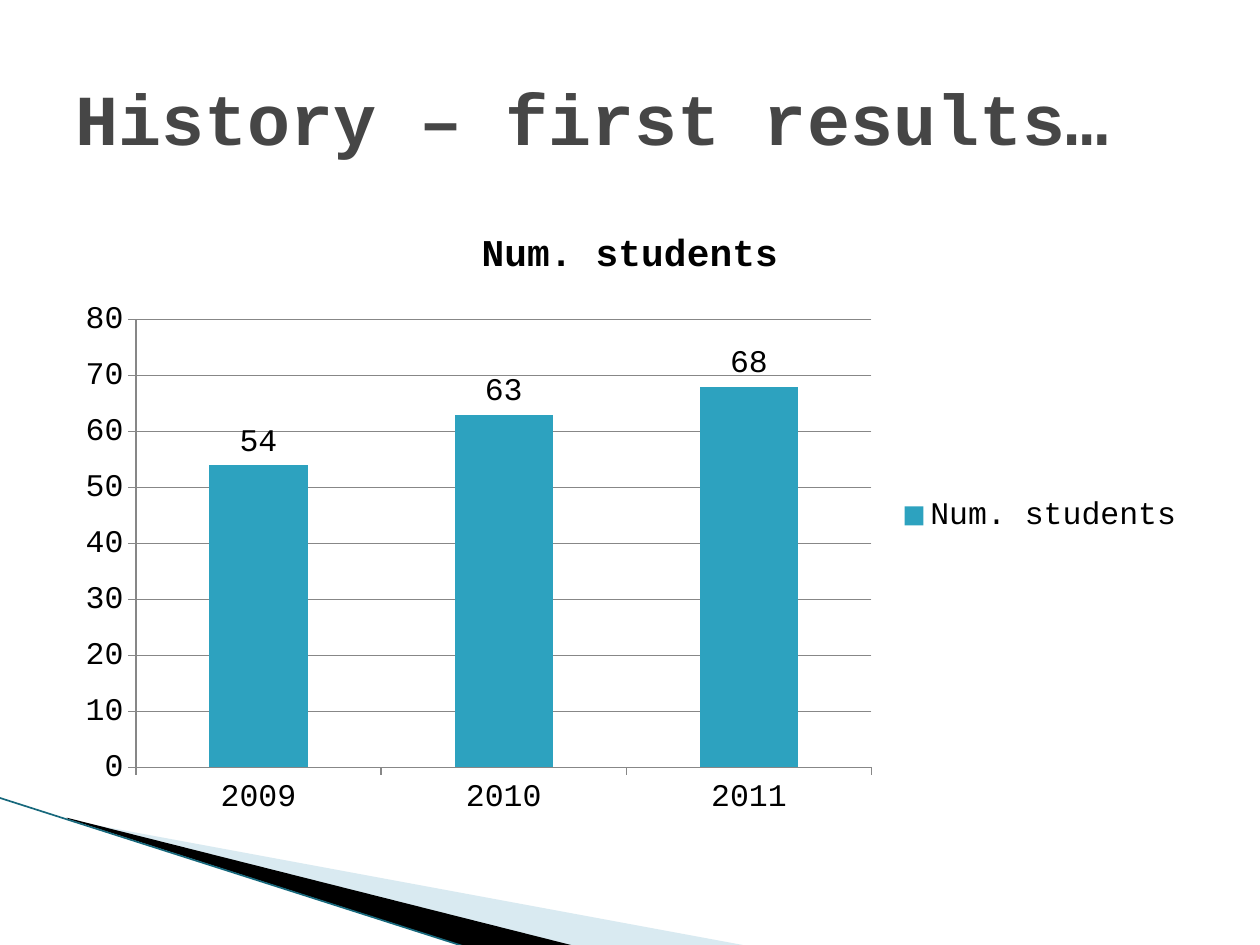
from dataclasses import dataclass

from lxml import etree
from pptx import Presentation
from pptx.chart.data import CategoryChartData
from pptx.dml.color import RGBColor
from pptx.enum.chart import (XL_CHART_TYPE, XL_LABEL_POSITION,
                             XL_LEGEND_POSITION, XL_TICK_MARK)
from pptx.enum.shapes import MSO_CONNECTOR
from pptx.enum.text import MSO_ANCHOR
from pptx.oxml.ns import qn
from pptx.util import Inches, Pt

COLUMN = XL_CHART_TYPE.COLUMN_CLUSTERED
ABOVE = XL_LABEL_POSITION.OUTSIDE_END
RIGHT = XL_LEGEND_POSITION.RIGHT
OUTSIDE = XL_TICK_MARK.OUTSIDE
STRAIGHT = MSO_CONNECTOR.STRAIGHT
MIDDLE = MSO_ANCHOR.MIDDLE


@dataclass(frozen=True)
class Theme:
    font: str = "Courier New"
    head: str = "464646"
    ink: str = "000000"
    bar: str = "2DA2BF"
    grid: str = "878787"
    pale: str = "A0CBDC"
    edge: str = "17687C"
    head_size: float = 41
    name_size: float = 21.6
    body_size: float = 18


def rgb(code):
    return RGBColor.from_string(code)


class Board:
    def __init__(self, slide, theme):
        self.slide = slide
        self.theme = theme

    def style(self, font, size, color, bold=False):
        font.name = self.theme.font
        font.size = Pt(size)
        font.bold = bold
        font.color.rgb = rgb(color)

    def wedge(self, points, color, alpha=100):
        start, *rest = [(Inches(x), Inches(y)) for x, y in points]
        path = self.slide.shapes.build_freeform(*start)
        path.add_line_segments(rest, close=True)
        shape = path.convert_to_shape()
        shape.shadow.inherit = False
        shape.fill.solid()
        shape.fill.fore_color.rgb = rgb(color)
        shape.line.fill.background()
        if alpha < 100:
            tint = shape.fill._xPr.find(".//" + qn("a:srgbClr"))
            etree.SubElement(tint, qn("a:alpha")).set("val", str(alpha * 1000))

    def line(self, start, end, color, width):
        ends = [Inches(v) for v in (*start, *end)]
        rule = self.slide.shapes.add_connector(STRAIGHT, *ends)
        rule.line.color.rgb = rgb(color)
        rule.line.width = Pt(width)
        etree.SubElement(rule._element.spPr, qn("a:effectLst"))

    def title(self, text, area):
        box = self.slide.shapes.add_textbox(*map(Inches, area))
        frame = box.text_frame
        frame.word_wrap = True
        frame.vertical_anchor = MIDDLE
        run = frame.paragraphs[0].add_run()
        run.text = text
        self.style(run.font, self.theme.head_size, self.theme.head, True)

    def chart(self, name, cats, vals, area):
        theme = self.theme
        data = CategoryChartData()
        data.categories = cats
        data.add_series(name, vals)
        frame = self.slide.shapes.add_chart(COLUMN, *map(Inches, area), data)
        chart = frame.chart
        self.style(chart.font, theme.body_size, theme.ink)

        # Heading and legend
        chart.has_title = True
        run = chart.chart_title.text_frame.paragraphs[0].add_run()
        run.text = name
        self.style(run.font, theme.name_size, theme.ink, True)
        chart.chart_title.include_in_layout = False
        chart.has_legend = True
        chart.legend.position = RIGHT
        chart.legend.include_in_layout = False

        # Axes
        scale = chart.value_axis
        scale.minimum_scale, scale.maximum_scale = 0, 80
        scale.major_unit = 10
        scale.has_major_gridlines = True
        for axis in (chart.category_axis, scale):
            axis.major_tick_mark = OUTSIDE
        for part in (chart.category_axis, scale, scale.major_gridlines):
            part.format.line.color.rgb = rgb(theme.grid)
            part.format.line.width = Pt(0.75)

        # Columns and their values
        plot = chart.plots[0]
        plot.gap_width = 150
        plot.vary_by_categories = False
        fill = plot.series[0].format.fill
        fill.solid()
        fill.fore_color.rgb = rgb(theme.bar)
        plot.has_data_labels = True
        plot.data_labels.show_value = True
        plot.data_labels.position = ABOVE


def main():
    deck = Presentation()
    deck.slide_width, deck.slide_height = Inches(10), Inches(7.5)
    theme = Theme()
    board = Board(deck.slides.add_slide(deck.slide_layouts[6]), theme)

    # Corner sweep
    board.wedge([(0.55, 6.51), (5.95, 7.51), (4.56, 7.51), (0.55, 6.5)],
                theme.pale, 40)
    board.wedge([(0.53, 6.49), (4.57, 7.51), (3.72, 7.52), (0.54, 6.5)],
                theme.ink)
    board.line((-0.01, 6.33), (3.71, 7.52), theme.edge, 0.95)

    # Content
    board.title("History – first results…", (0.5, 0.3, 9, 1.25))
    board.chart("Num. students", ["2009", "2010", "2011"], [54, 63, 68],
                (0.5, 1.62, 9, 4.95))
    deck.save("out.pptx")


if __name__ == "__main__":
    main()
